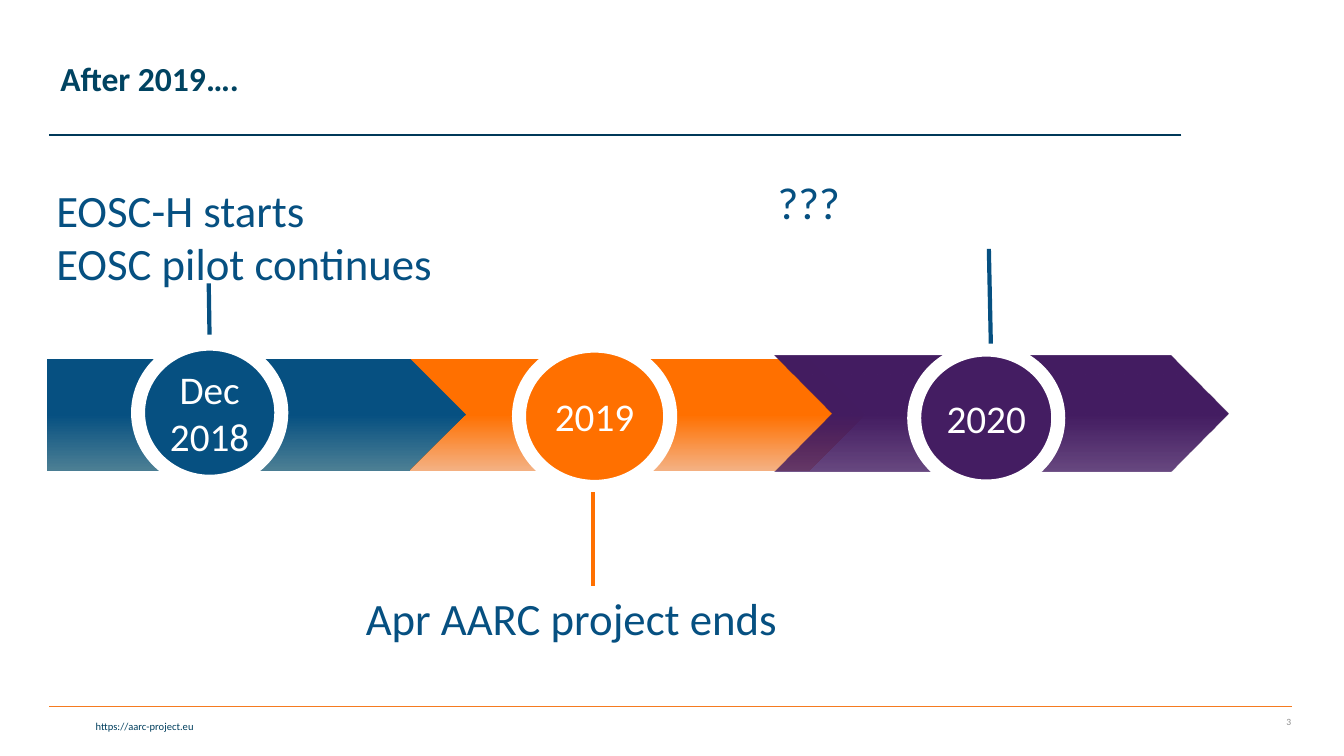
import pptx
import pptx.util
import pptx.dml.color
import pptx.enum.shapes
import pptx.enum.text
import pptx.oxml
import pptx.oxml.ns

Cm = pptx.util.Cm
Pt = pptx.util.Pt
SHAPE = pptx.enum.shapes.MSO_SHAPE
ALIGN = pptx.enum.text.PP_ALIGN
ANCHOR = pptx.enum.text.MSO_ANCHOR

INK = {
    "navy": "065081",
    "mist": "4C7F94",
    "orange": "FF7000",
    "peach": "F4B183",
    "plum": "441D62",
    "white": "FFFFFF",
    "title": "004361",
    "rule": "003959",
    "foot": "F57B20",
    "link": "003F5E",
    "gray": "8C8C8C",
}


def ink(name):
    return pptx.dml.color.RGBColor.from_string(INK[name])


def write(frame, lines, size, tone, align=ALIGN.LEFT, bold=False):
    frame.word_wrap = True
    for i, line in enumerate(lines):
        para = frame.paragraphs[0] if i == 0 else frame.add_paragraph()
        para.alignment = align
        run = para.add_run()
        run.text = line
        run.font.name = "Calibri"
        run.font.size = Pt(size)
        run.font.bold = bold
        run.font.color.rgb = ink(tone)


def add_text(slide, box, lines, size, tone, align=ALIGN.LEFT, anchor=ANCHOR.TOP, bold=False):
    frame = slide.shapes.add_textbox(*map(Cm, box)).text_frame
    frame.vertical_anchor = anchor
    write(frame, lines, size, tone, align, bold)
    return frame


def add_line(slide, ends, tone, width):
    kind = pptx.enum.shapes.MSO_CONNECTOR.STRAIGHT
    line = slide.shapes.add_connector(kind, *map(Cm, ends))
    line.line.color.rgb = ink(tone)
    line.line.width = Pt(width)
    props = line.element.find(pptx.oxml.ns.qn("p:spPr"))
    props.append(pptx.oxml.parse_xml(f'<a:effectLst {pptx.oxml.ns.nsdecls("a")}/>'))


def add_band(slide, kind, box, top, base, alpha=100):
    band = slide.shapes.add_shape(kind, *map(Cm, box))
    band.shadow.inherit = False
    band.line.fill.background()
    band.fill.gradient()
    band.fill.gradient_angle = 270
    stops = band.fill.gradient_stops
    for stop, spot, tone in zip(stops, (0.5, 1), (top, base)):
        stop.position = spot
        stop.color.rgb = ink(tone)
    if alpha < 100:
        last = list(band.element.iter(pptx.oxml.ns.qn("a:srgbClr")))[-1]
        mark = f'<a:alpha {pptx.oxml.ns.nsdecls("a")} val="{alpha * 1000}"/>'
        last.append(pptx.oxml.parse_xml(mark))


def add_disc(slide, box, label, tone):
    disc = slide.shapes.add_shape(SHAPE.OVAL, *map(Cm, box))
    disc.shadow.inherit = False
    disc.fill.solid()
    disc.fill.fore_color.rgb = ink(tone)
    disc.line.color.rgb = ink("white")
    disc.line.width = Pt(10)
    frame = disc.text_frame
    frame.margin_left = frame.margin_right = 0
    frame.vertical_anchor = ANCHOR.MIDDLE
    write(frame, [label], 28, "white", ALIGN.CENTER)


def main():
    deck = pptx.Presentation()
    deck.slide_width, deck.slide_height = Cm(33.87), Cm(19.05)
    slide = deck.slides.add_slide(deck.slide_layouts[6])

    add_line(slide, (1.24, 17.81, 32.56, 17.81), "foot", 1)
    add_text(slide, (0.08, 18.01, 5.05, 0.58), ["https://aarc-project.eu"], 7.5, "link", ALIGN.RIGHT)
    add_line(slide, (29.77, 3.4, 1.24, 3.4), "rule", 1)
    add_text(slide, (30.73, 17.81, 2.06, 0.76), ["3"], 6.8, "gray", ALIGN.RIGHT, ANCHOR.MIDDLE)
    title = add_text(slide, (1.27, 0.2, 26.7, 3.68), ["After 2019…."], 24, "title",
                     anchor=ANCHOR.MIDDLE, bold=True)
    title.paragraphs[0].line_spacing = 0.9

    add_band(slide, SHAPE.PENTAGON, (1.19, 9.04, 11.46, 2.82), "navy", "mist")
    add_band(slide, SHAPE.CHEVRON, (10.34, 9.04, 11.46, 2.82), "orange", "peach")
    add_band(slide, SHAPE.CHEVRON, (19.51, 8.97, 11.46, 2.92), "plum", "plum", 80)

    for box, label, tone, stem, hue in (
        ((3.48, 8.66, 3.61, 3.48), "Dec 2018", "navy", (5.26, 7.14, 5.28, 8.43), "navy"),
        ((13.08, 8.71, 3.81, 3.56), "2019", "orange", (14.94, 12.4, 14.94, 14.76), "orange"),
        ((23.04, 8.81, 3.63, 3.45), "2020", "plum", (24.92, 6.27, 24.97, 8.66), "navy"),
    ):
        add_disc(slide, box, label, tone)
        add_line(slide, stem, hue, 3)

    for box, lines in (
        ((1.17, 4.47, 10.11, 4.37), ["EOSC-H starts", "EOSC pilot continues"]),
        ((8.97, 14.76, 11.13, 1.63), ["Apr AARC project ends"]),
        ((19.35, 4.29, 11.13, 1.63), ["???"]),
    ):
        add_text(slide, box, lines, 32, "navy")

    deck.save("out.pptx")


if __name__ == "__main__":
    main()
